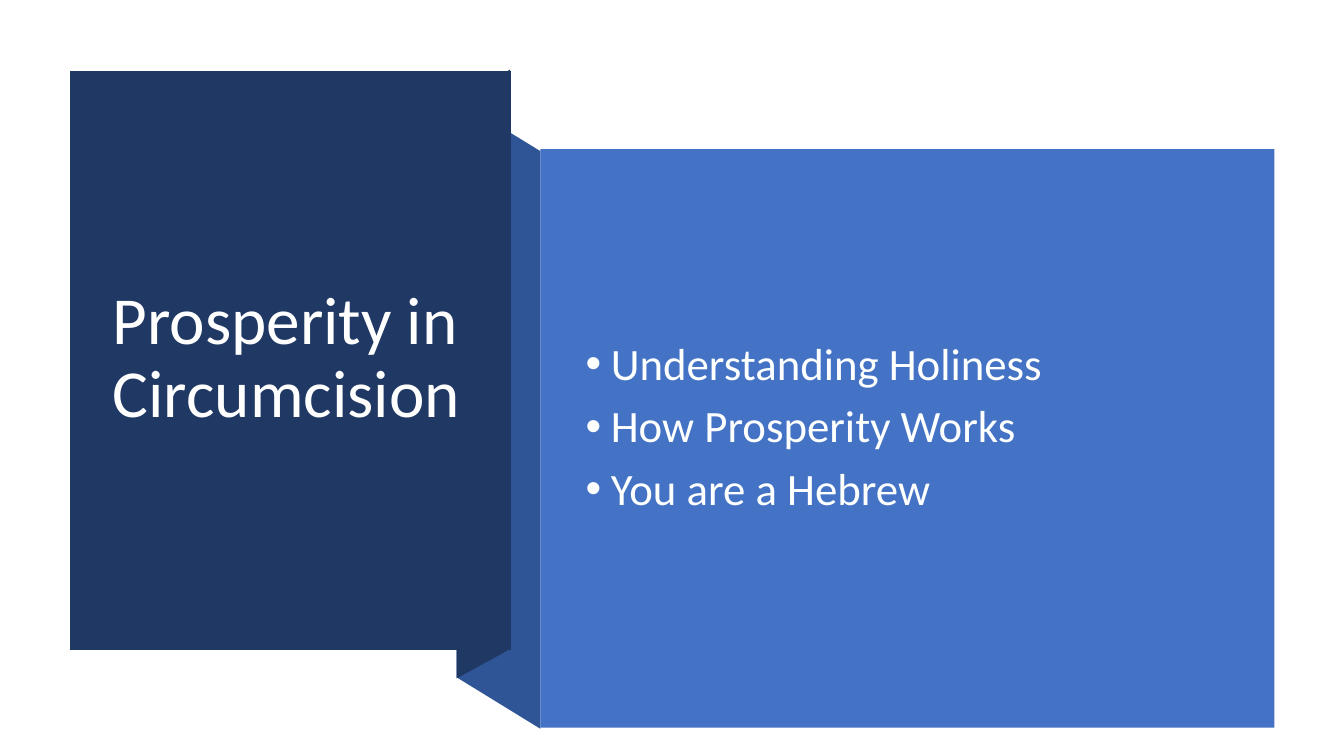
"""Build a folded-ribbon slide with a title panel and a bullet panel."""
from lxml import etree
from pptx import Presentation, util as u
from pptx.dml.color import RGBColor
from pptx.enum import shapes, text
from pptx.oxml.ns import qn

NAVY = RGBColor(0x20, 0x38, 0x64)
MID = RGBColor(0x2F, 0x55, 0x97)
BLUE = RGBColor(0x44, 0x72, 0xC4)
WHITE = RGBColor(0xFF, 0xFF, 0xFF)
PALE = RGBColor(0xFE, 0xFF, 0xFF)

SIZE = (13.33, 7.5)
TITLE = ["Prosperity in Circumcision"]
POINTS = ["Understanding Holiness", "How Prosperity Works", "You are a Hebrew"]
FOLDS = [
    (MID, [(5.36, 7.23), (4.53, 6.72), (4.53, 0.99), (5.36, 1.5)]),
    (NAVY, [(5.06, 6.44), (4.53, 6.73), (4.53, 0.98), (5.06, 0.69)]),
    (NAVY, [(0.69, 0.7), (5.07, 0.7), (5.07, 6.45), (0.69, 6.45)]),
]
PANEL = (5.36, 1.48, 7.28, 5.74)
HEAD = {"size": u.Pt(48), "name": "Calibri"}
BODY = {"size": u.Pt(32), "name": "Calibri"}
FRAME = {"word_wrap": True, "vertical_anchor": text.MSO_ANCHOR.MIDDLE,
         "auto_size": text.MSO_AUTO_SIZE.NONE}


def apply(item, form):
    for key, value in form.items():
        setattr(item, key, value)


def paint(shape, color):
    shape.shadow.inherit = False
    shape.fill.solid()
    shape.fill.fore_color.rgb = color
    shape.line.fill.background()


def fold(slide, color, dots):
    first, *rest = [(u.Inches(x), u.Inches(y)) for x, y in dots]
    pen = slide.shapes.build_freeform(*first)
    pen.add_line_segments(rest, close=True)
    paint(pen.convert_to_shape(), color)


def bullet(para):
    props = para._p.get_or_add_pPr()
    props.set("marL", str(u.Inches(0.25)))
    props.set("indent", str(-u.Inches(0.25)))
    etree.SubElement(props, qn("a:buFont")).set("typeface", "Arial")
    etree.SubElement(props, qn("a:buChar")).set("char", "•")


def write(slide, box, lines, font, color, gap=0, dotted=False):
    frame = slide.shapes.add_textbox(*map(u.Inches, box)).text_frame
    apply(frame, FRAME)
    for i, line in enumerate(lines):
        para = frame.add_paragraph() if i else frame.paragraphs[0]
        apply(para, {"line_spacing": 0.9, "space_before": u.Pt(gap)})
        if dotted:
            bullet(para)
        run = para.add_run()
        run.text = line
        apply(run.font, font)
        run.font.color.rgb = color


def main():
    deck = Presentation()
    deck.slide_width, deck.slide_height = map(u.Inches, SIZE)
    slide = deck.slides.add_slide(deck.slide_layouts[6])
    for color, dots in FOLDS:
        fold(slide, color, dots)
    write(slide, (1.02, 1.07, 3.71, 4.99), TITLE, HEAD, WHITE)
    panel = slide.shapes.add_shape(
        shapes.MSO_SHAPE.RECTANGLE, *map(u.Inches, PANEL))
    paint(panel, BLUE)
    write(slide, (5.71, 1.88, 6.51, 4.74), POINTS, BODY, PALE, 10, True)
    deck.save("out.pptx")


if __name__ == "__main__":
    main()
